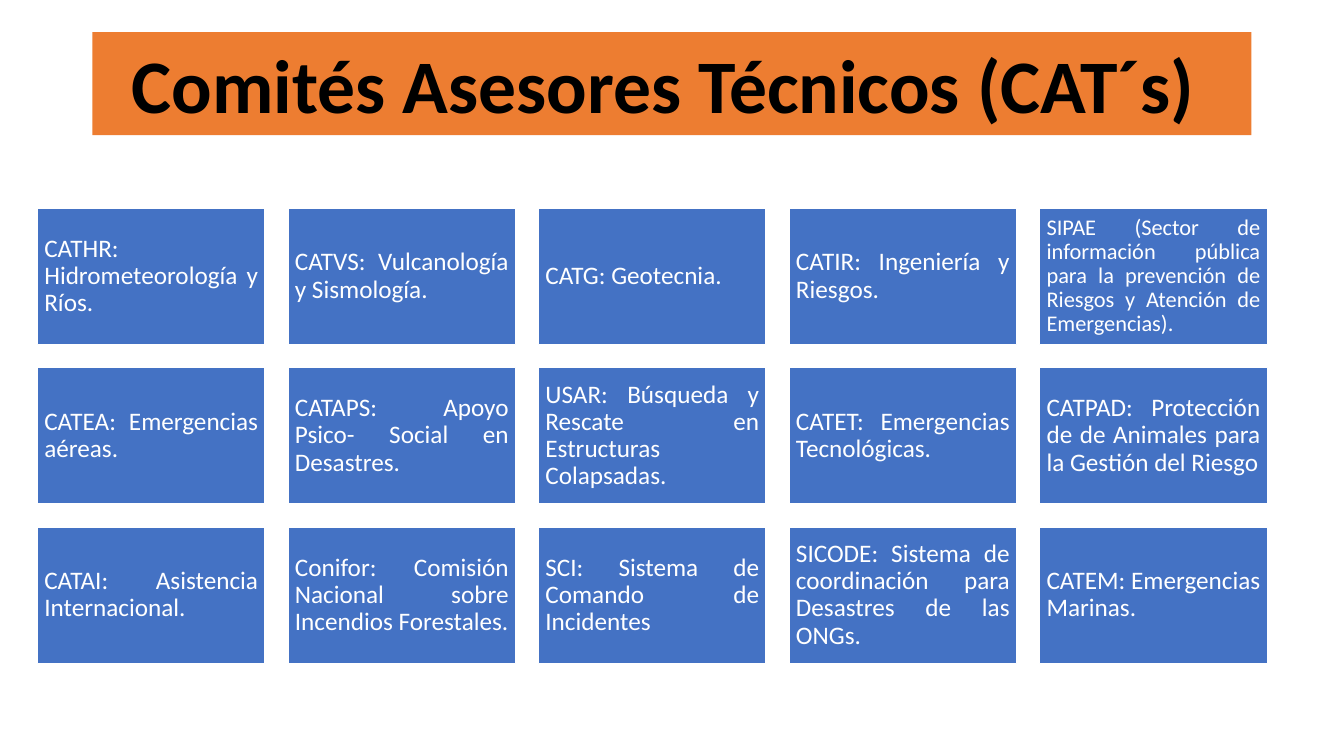
from pptx import Presentation
from pptx.dml.color import RGBColor
from pptx.enum.shapes import MSO_SHAPE as Shape
from pptx.enum.text import MSO_ANCHOR as Anchor, PP_ALIGN as Align
from pptx.util import Pt


def color(value):
    return RGBColor.from_string(value)


def add_box(slide, left, top, width, height, fill, text, frame_format, para_format, font_format, ink):
    box = slide.shapes.add_shape(Shape.RECTANGLE, Pt(left), Pt(top), Pt(width), Pt(height))
    box.shadow.inherit = False
    box.fill.solid()
    box.fill.fore_color.rgb = color(fill)
    box.line.fill.background()
    frame = box.text_frame
    para = frame.paragraphs[0]
    span = para.add_run()
    span.text = text
    span.font.color.rgb = color(ink)
    for target, values in ((frame, frame_format), (para, para_format), (span.font, font_format)):
        for name, value in values.items():
            setattr(target, name, value)
    return box


deck = Presentation()
deck.slide_width, deck.slide_height = Pt(960), Pt(540)
slide = deck.slides.add_slide(deck.slide_layouts[6])

committees = [
    ["CATHR: Hidrometeorología y Ríos.",
     "CATVS: Vulcanología y Sismología.",
     "CATG: Geotecnia.",
     "CATIR: Ingeniería y Riesgos.",
     "SIPAE (Sector de información pública para la prevención de Riesgos y Atención de Emergencias)."],
    ["CATEA: Emergencias aéreas.",
     "CATAPS: Apoyo Psico- Social en Desastres.",
     "USAR: Búsqueda y Rescate en Estructuras Colapsadas.",
     "CATET: Emergencias Tecnológicas.",
     "CATPAD: Protección de de Animales para la Gestión del Riesgo"],
    ["CATAI: Asistencia Internacional.",
     "Conifor: Comisión Nacional sobre Incendios Forestales.",
     "SCI: Sistema de Comando de Incidentes",
     "SICODE: Sistema de coordinación para Desastres de las ONGs.",
     "CATEM: Emergencias Marinas."],
]
card_width, card_height = 162.7, 97.6
gap = card_width / 10
card_frame = {"word_wrap": True, "vertical_anchor": Anchor.MIDDLE}
for side in ("left", "top", "right", "bottom"):
    card_frame[f"margin_{side}"] = Pt(5)
card_para = {"alignment": Align.JUSTIFY, "line_spacing": 0.9}

for row, names in enumerate(committees):
    for column, name in enumerate(names):
        size = 16 if name.startswith("SIPAE") else 18
        card = add_box(slide, 26.7 + column * (card_width + gap), 148.6 + row * (card_height + gap),
                       card_width, card_height, "4472C4", name, card_frame, card_para,
                       {"name": "Calibri", "size": Pt(size)}, "FFFFFF")
        card.line.color.rgb = color("FFFFFF")
        card.line.width = Pt(1)

add_box(slide, 66, 23, 828, 73.5, "ED7D31", "Comités Asesores Técnicos (CAT´s) ",
        {"word_wrap": True, "vertical_anchor": Anchor.BOTTOM},
        {"alignment": Align.CENTER, "line_spacing": 0.9, "space_after": Pt(6)},
        {"name": "Calibri", "size": Pt(54), "bold": True}, "000000")

deck.save("out.pptx")
